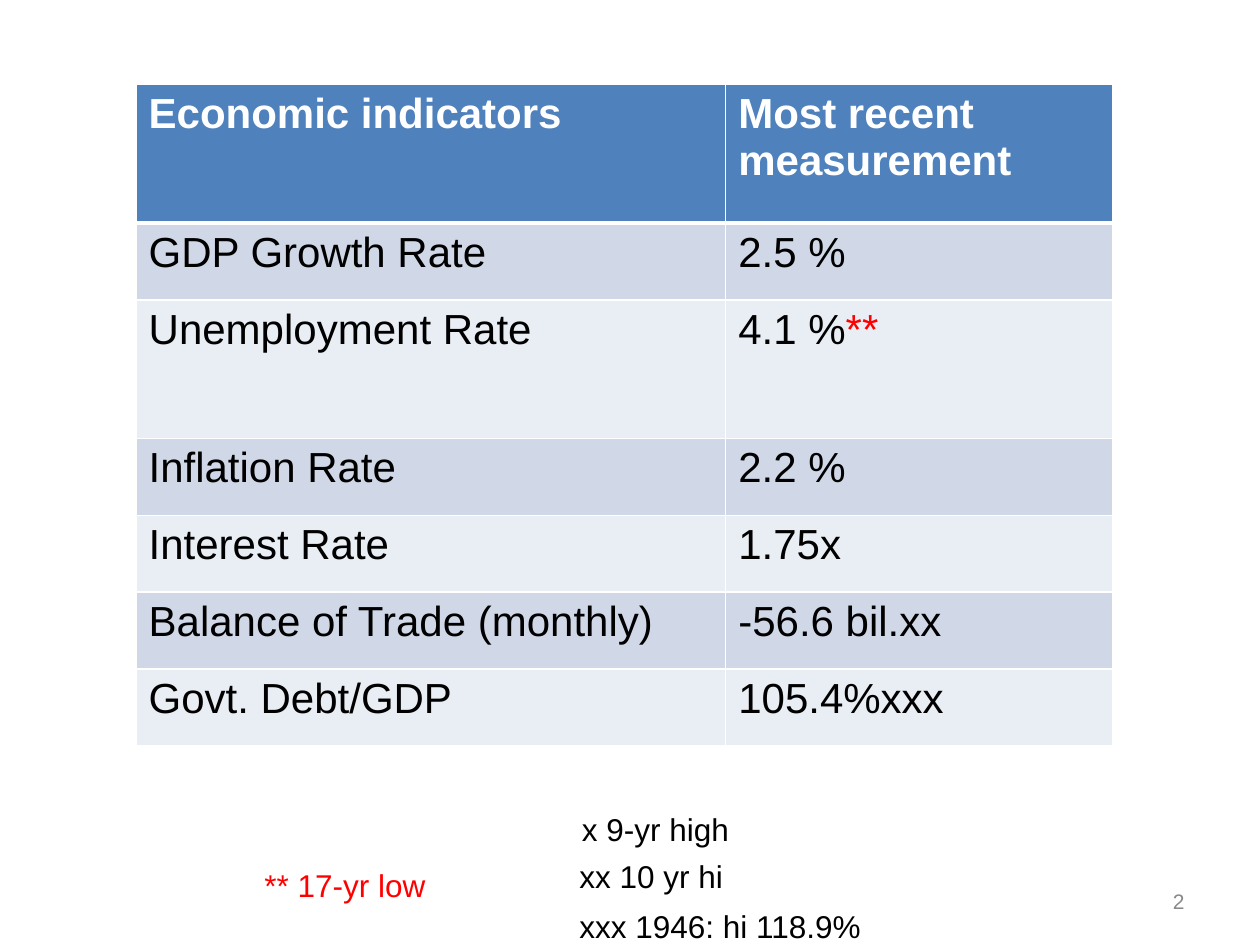
from lxml import etree
from pptx import Presentation
from pptx.dml.color import RGBColor
from pptx.enum.shapes import MSO_SHAPE
from pptx.enum.text import MSO_ANCHOR, PP_ALIGN
from pptx.oxml.ns import qn
from pptx.util import Inches, Pt

RECTANGLE = MSO_SHAPE.RECTANGLE
MIDDLE = MSO_ANCHOR.MIDDLE
LEFT, RIGHT = PP_ALIGN.LEFT, PP_ALIGN.RIGHT

COLORS = {
    "header": "4F81BD",
    "odd_row": "D0D8E8",
    "even_row": "E9EDF4",
    "white": "FFFFFF",
    "text": "000000",
    "alert": "FF0000",
    "number": "898989",
}

INDICATORS = [
    ("Economic indicators", "Most recent measurement"),
    ("GDP Growth Rate", "2.5 %"),
    ("Unemployment Rate", "4.1 %**"),
    ("Inflation Rate", "2.2 %"),
    ("Interest Rate", "1.75x"),
    ("Balance of Trade (monthly)", "-56.6 bil.xx"),
    ("Govt. Debt/GDP", "105.4%xxx"),
]
COLUMN_WIDTHS = (4.68, 3.07)
TALL_ROWS = (0, 2)
TALL, SHORT = 1.1, 0.61

FOOTNOTES = [
    ("** 17-yr low", "alert", (2, 6.82, 1.49, 0.4)),
    ("x 9-yr high", "text", (4.52, 6.38, 1.38, 0.4)),
    ("xxx 1946: hi 118.9%", "text", (4.5, 7.15, 2.45, 0.4)),
    ("xx 10 yr hi", "text", (4.5, 6.75, 1.35, 0.4)),
]


def color(name):
    """Return the named colour."""
    return RGBColor.from_string(COLORS[name])


def add_run(paragraph, text, color_name, size, bold=False):
    """Append a formatted run to the paragraph."""
    run = paragraph.add_run()
    run.text = text
    formats = {"name": "Arial", "size": Pt(size), "bold": bold}
    for attribute, value in formats.items():
        setattr(run.font, attribute, value)
    run.font.color.rgb = color(color_name)


def add_border(cell, side, width):
    """Draw one white border on the given side of a cell."""
    line = etree.SubElement(cell._tc.get_or_add_tcPr(), qn(f"a:ln{side}"), w=str(Pt(width)))
    fill = etree.SubElement(line, qn("a:solidFill"))
    etree.SubElement(fill, qn("a:srgbClr"), val=COLORS["white"])


def fill_cell(cell, row_index, text):
    """Format one cell by its row and write its text."""
    header = row_index == 0
    for side in "LRTB":
        thick = (row_index, side) in ((0, "B"), (1, "T"))
        add_border(cell, side, 3 if thick else 1)
    cell.fill.solid()
    band = "odd_row" if row_index % 2 else "even_row"
    cell.fill.fore_color.rgb = color("header" if header else band)
    value, mark, _ = text.partition("**")
    paragraph = cell.text_frame.paragraphs[0]
    add_run(paragraph, value, "white" if header else "text", 24, header)
    if mark:
        add_run(paragraph, mark, "alert", 24)


def add_indicator_table(slide, box):
    """Place the table of economic indicators in the box."""
    frame = slide.shapes.add_table(len(INDICATORS), len(COLUMN_WIDTHS), *map(Inches, box))
    table = frame.table
    for column, width in zip(table.columns, COLUMN_WIDTHS):
        column.width = Inches(width)
    for row_index, texts in enumerate(INDICATORS):
        table.rows[row_index].height = Inches(TALL if row_index in TALL_ROWS else SHORT)
        for column_index, text in enumerate(texts):
            fill_cell(table.cell(row_index, column_index), row_index, text)


def add_footnote(slide, box, text, color_name):
    """Place a footnote on a white rectangle in the box."""
    note = slide.shapes.add_shape(RECTANGLE, *map(Inches, box))
    note.shadow.inherit = False
    note.fill.solid()
    note.fill.fore_color.rgb = color("white")
    note.line.fill.background()
    note.text_frame.word_wrap = False
    paragraph = note.text_frame.paragraphs[0]
    paragraph.alignment = LEFT
    add_run(paragraph, text, color_name, 18)


def add_slide_number(slide, box, number):
    """Place the slide number at the right of the box."""
    frame = slide.shapes.add_textbox(*map(Inches, box)).text_frame
    frame.word_wrap = True
    frame.vertical_anchor = MIDDLE
    paragraph = frame.paragraphs[0]
    paragraph.alignment = RIGHT
    add_run(paragraph, number, "number", 12)


def main():
    """Build and save the slide."""
    presentation = Presentation()
    presentation.slide_width, presentation.slide_height = Inches(10), Inches(7.5)
    slide = presentation.slides.add_slide(presentation.slide_layouts[6])
    add_indicator_table(slide, (1.08, 0.67, 7.75, 5.25))
    add_slide_number(slide, (7.17, 6.95, 2.33, 0.4), "2")
    for text, color_name, box in FOOTNOTES:
        add_footnote(slide, box, text, color_name)
    presentation.save("out.pptx")


if __name__ == "__main__":
    main()
